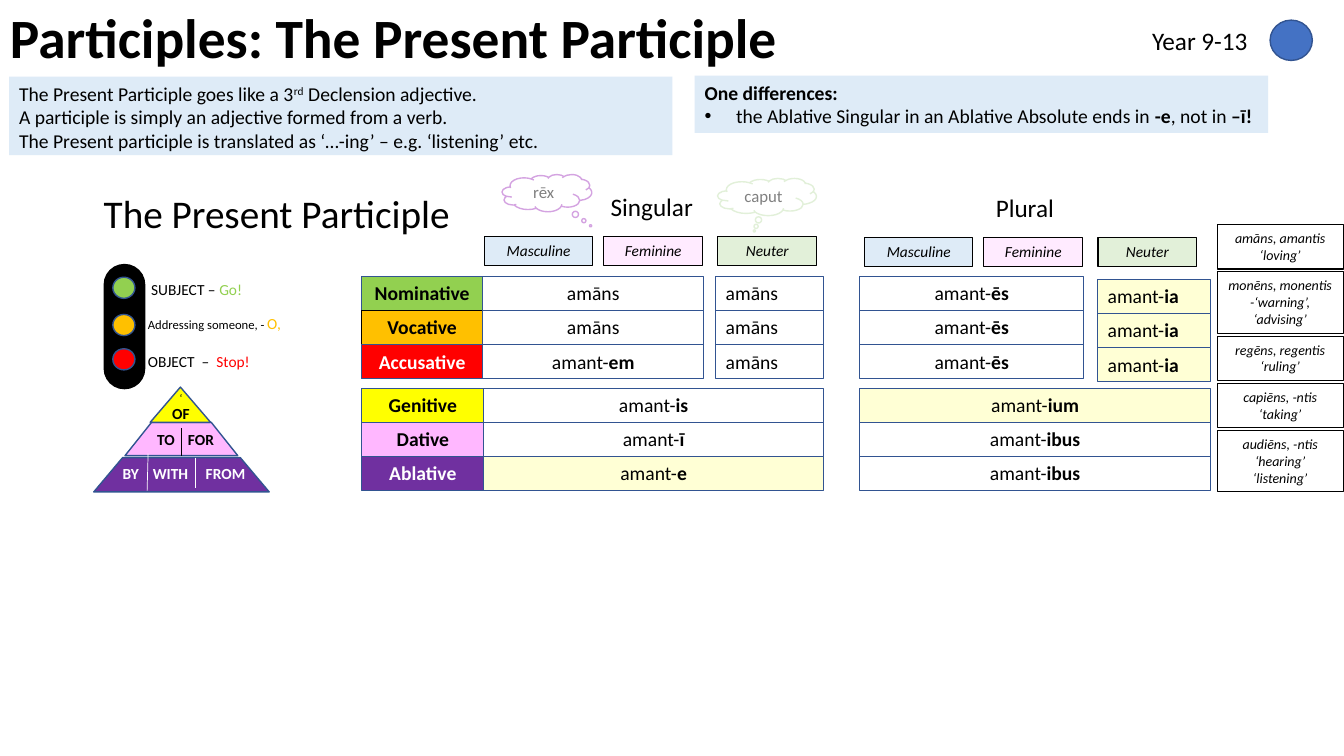
from dataclasses import dataclass

from lxml import etree
from pptx import Presentation
from pptx.dml.color import RGBColor
from pptx.enum import shapes, text
from pptx.oxml import ns
from pptx.util import Pt

KIND = shapes.MSO_SHAPE
MIDDLE = text.MSO_ANCHOR.MIDDLE
TOP = text.MSO_ANCHOR.TOP


@dataclass(frozen=True)
class Theme:
    font: str = "Calibri"
    black: str = "000000"
    white: str = "FFFFFF"
    grey: str = "808080"
    navy: str = "325491"
    blue: str = "4472C4"
    sky: str = "DEEBF7"
    blush: str = "FFEBFF"
    mint: str = "E2F0D9"
    cream: str = "FFFFD5"
    lilac: str = "D4A3E1"
    green: str = "92D050"
    amber: str = "FFC000"
    red: str = "FF0000"
    yellow: str = "FFFF00"
    pink: str = "FFB7FF"
    purple: str = "7030A0"
    title: float = 39.6
    heading: float = 28
    number: float = 18
    body: float = 14
    cloud: float = 12
    label: float = 11
    note: float = 10
    aside: float = 9
    mark: float = 8


class Sheet:
    def __init__(self, slide, theme):
        self.slide = slide
        self.theme = theme

    def fill_text(self, frame, lines, size, color=None, bold=False, italic=False,
                  centred=False, anchor=TOP):
        frame.word_wrap = True
        frame.vertical_anchor = anchor
        for index, line in enumerate(lines):
            paragraph = frame.paragraphs[0] if index == 0 else frame.add_paragraph()
            paragraph.alignment = text.PP_ALIGN.CENTER if centred else text.PP_ALIGN.LEFT
            for piece in [line] if isinstance(line, str) else line:
                words, change = (piece, {}) if isinstance(piece, str) else piece
                run = paragraph.add_run()
                run.text = words
                run.font.name = self.theme.font
                run.font.size = Pt(change.get("size", size))
                run.font.bold = change.get("bold", bold)
                run.font.italic = italic
                tone = change.get("color", color or self.theme.black)
                run.font.color.rgb = RGBColor.from_string(tone)
                if "raised" in change:
                    run._r.get_or_add_rPr().set("baseline", str(change["raised"] * 1000))
        return frame

    def label(self, x, y, w, h, lines, size, **style):
        box = self.slide.shapes.add_textbox(Pt(x), Pt(y), Pt(w), Pt(h))
        return self.fill_text(box.text_frame, lines, size, **style)

    def shape(self, kind, x, y, w, h, fill=None, line=None, weight=1, adjust=(), turn=0):
        item = self.slide.shapes.add_shape(kind, Pt(x), Pt(y), Pt(w), Pt(h))
        item.shadow.inherit = False
        item.rotation = turn
        for index, value in enumerate(adjust):
            item.adjustments[index] = value
        if fill:
            item.fill.solid()
            item.fill.fore_color.rgb = RGBColor.from_string(fill)
        else:
            item.fill.background()
        if line:
            item.line.color.rgb = RGBColor.from_string(line)
            item.line.width = Pt(weight)
        else:
            item.line.fill.background()
        return item

    def box(self, x, y, w, h, lines, size, fill=None, line=None, **style):
        item = self.shape(KIND.RECTANGLE, x, y, w, h, fill, line, 0.75)
        return self.fill_text(item.text_frame, lines, size, **style)

    def divider(self, x1, y1, x2, y2, color, weight):
        rule = self.slide.shapes.add_connector(
            shapes.MSO_CONNECTOR.STRAIGHT, Pt(x1), Pt(y1), Pt(x2), Pt(y2))
        rule.line.color.rgb = RGBColor.from_string(color)
        rule.line.width = Pt(weight)
        etree.SubElement(rule._element.spPr, ns.qn("a:effectLst"))

    def tabs(self, paragraph, stops):
        tab_list = etree.SubElement(paragraph._p.get_or_add_pPr(), ns.qn("a:tabLst"))
        for stop in stops:
            etree.SubElement(tab_list, ns.qn("a:tab"), pos=str(Pt(stop)), algn="l")

    def bullet(self, paragraph, indent):
        properties = paragraph._p.get_or_add_pPr()
        properties.set("marL", str(Pt(indent)))
        properties.set("indent", str(-Pt(indent)))
        etree.SubElement(properties, ns.qn("a:buFont"), typeface="Arial")
        etree.SubElement(properties, ns.qn("a:buChar"), char="•")


def bold(words):
    return words, {"bold": True}


def form(ending):
    return [["amant-", bold(ending)]] if ending else ["amāns"]


def draw_header(sheet, t):
    title = sheet.label(0, 0.7, 576, 56.2, ["Participles: The Present Participle"],
                        t.title, bold=True, anchor=MIDDLE)
    title.paragraphs[0].line_spacing = 0.9
    sheet.box(6.5, 54.7, 473.8, 56.2, [
        ["The Present Participle goes like a 3", ("rd", {"raised": 30}),
         " Declension adjective."],
        "A participle is simply an adjective formed from a verb.",
        "The Present participle is translated as ‘…-ing’ – e.g. ‘listening’ etc.",
    ], t.body, t.sky)
    difference = sheet.box(496.2, 54, 409.6, 41, [
        [bold("One differences:")],
        ["the Ablative Singular in an Ablative Absolute ends in ", bold("-e"),
         ", not in ", bold("–ī!")],
    ], t.body, t.sky)
    sheet.bullet(difference.paragraphs[1], 22.5)
    sheet.label(815.8, 14.4, 91.4, 28.8, ["Year 9-13"], t.number)
    sheet.shape(KIND.OVAL, 907.2, 14.4, 30.2, 28.8, t.blue, t.navy)
    sheet.label(67, 131.8, 308, 41, ["The Present Participle"], t.heading)


def draw_declension(sheet, t):
    for name, x, y in (("Singular", 429.1, 133.2), ("Plural", 704.2, 133.9)):
        sheet.label(x, y, 80, 28.8, [name], t.number)
    genders = (("Masculine", 0, 77, t.sky), ("Feminine", 85, 70.6, t.blush),
               ("Neuter", 166.5, 70.6, t.mint))
    for left, top in ((346.3, 168.8), (617.8, 169.6)):
        for gender, offset, width, fill in genders:
            sheet.box(left + offset, top, width, 20.9, [gender], t.label, fill, t.black,
                      italic=True, centred=True)

    direct = (("Nominative", t.green, t.navy, t.black, ""),
              ("Vocative", t.amber, t.black, t.black, ""),
              ("Accusative", t.red, t.navy, t.white, "em"))
    oblique = (("Genitive", t.yellow, t.black, "is", None, "ium", t.cream),
               ("Dative", t.pink, t.black, "ī", None, "ibus", None),
               ("Ablative", t.purple, t.white, "e", t.cream, "ibus", None))
    height = pitch = 24.4
    for row, (case, fill, edge, ink, ending) in enumerate(direct):
        y = 197.3 + row * pitch
        sheet.box(258.2, y, 86.7, height, [case], t.body, fill, edge,
                  color=ink, bold=True, centred=True)
        cells = ((344.9, y, 157.7, ending, None, True), (511.3, y, 77, "", None, False),
                 (614.2, y, 159.8, "ēs", None, True),
                 (784.1, y + 2.1, 80.6, "ia", t.cream, False))
        for x, top, width, suffix, tint, centred in cells:
            sheet.box(x, top, width, height, form(suffix), t.body, tint, t.navy,
                      centred=centred)
    for row, (case, fill, ink, singular, tint, plural, plural_tint) in enumerate(oblique):
        y = 277.2 + row * pitch
        sheet.box(258.5, y, 87.1, height, [case], t.body, fill, t.navy,
                  color=ink, bold=True, centred=True)
        sheet.box(345.6, y, 242.6, height, form(singular), t.body, tint, t.navy, centred=True)
        sheet.box(614.2, y, 250.4, height, form(plural), t.body, plural_tint, t.navy,
                  centred=True)

    clouds = (("rēx", 358.6, 124.6, 64.1, t.lilac, (0.487, 0.88)),
              ("caput", 512.6, 127.4, 70.6, t.mint, (-0.128, 0.914)))
    for noun, x, y, width, edge, tail in clouds:
        cloud = sheet.shape(KIND.CLOUD_CALLOUT, x, y, width, 26.6, t.white, edge, adjust=tail)
        sheet.fill_text(cloud.text_frame, [noun], t.cloud, color=t.grey, centred=True,
                        anchor=MIDDLE)


def draw_traffic_light(sheet, t):
    sheet.shape(KIND.FLOWCHART_TERMINATOR, 44.6, 218.9, 88.6, 28.8, t.black, t.black, turn=90)
    signals = (
        (198, t.green, 100.8, 196.6, ["SUBJECT – ", ("Go!", {"color": t.green})]),
        (224.6, t.amber, 98.6, 221, [("Addressing someone, - ", {"size": t.aside}),
                                     ("O,", {"color": t.amber})]),
        (249.1, t.red, 98.6, 247.7, ["OBJECT  –  ", ("Stop!", {"color": t.red})]),
    )
    for lamp_y, lamp, x, y, meaning in signals:
        sheet.shape(KIND.OVAL, 80.6, lamp_y, 15.8, 15.1, lamp, t.navy)
        sheet.label(x, y, 134, 20.9, [meaning], t.label)


def draw_pyramid(sheet, t):
    sheet.shape(KIND.TRAPEZOID, 89.3, 301.7, 80.6, 23.8, t.pink, t.navy, adjust=[0.797])
    sheet.shape(KIND.FLOWCHART_EXTRACT, 107.3, 276.5, 43.2, 25.2, t.yellow, t.navy)
    sheet.label(110.2, 275.8, 38.2, 30.2, [[("‘", {"size": t.mark, "bold": False})], "OF"],
                t.label, bold=True, centred=True)
    sheet.divider(129.6, 306, 129.6, 325.4, t.black, 1)
    middle = sheet.label(105.1, 303.8, 85.7, 20.9, ["TO\tFOR"], t.label, bold=True)
    sheet.tabs(middle.paragraphs[0], [22])
    sheet.shape(KIND.TRAPEZOID, 67, 326.9, 125.3, 24.5, t.purple, t.navy, adjust=[0.842])
    base = sheet.label(80.6, 328.3, 115.2, 20.9, ["BY\tWITH\tFROM"], t.label,
                       color=t.white, bold=True)
    sheet.tabs(base.paragraphs[0], [21.5, 59.3])
    sheet.divider(105.8, 324, 105.1, 350.6, t.white, 0.5)
    sheet.divider(139.7, 326.9, 139.7, 348.5, t.white, 0.5)


def draw_verbs(sheet, t):
    y = 160.5
    verbs = ((31.7, ["amāns, amantis", "‘loving’"]),
             (43.9, ["monēns, monentis", "-‘warning’, ‘advising’"]),
             (31.7, ["regēns, regentis", "‘ruling’"]),
             (31.7, ["capiēns, -ntis", "‘taking’"]),
             (43.9, ["audiēns, -ntis", "‘hearing’", "‘listening’"]))
    for height, lines in verbs:
        sheet.box(869.4, y, 90, height, lines, t.note, None, t.black, italic=True, centred=True)
        y += height + 2


def main():
    deck = Presentation()
    deck.slide_width, deck.slide_height = Pt(960), Pt(540)
    theme = Theme()
    sheet = Sheet(deck.slides.add_slide(deck.slide_layouts[6]), theme)
    for draw in (draw_header, draw_declension, draw_traffic_light, draw_pyramid, draw_verbs):
        draw(sheet, theme)
    deck.save("out.pptx")


if __name__ == "__main__":
    main()
